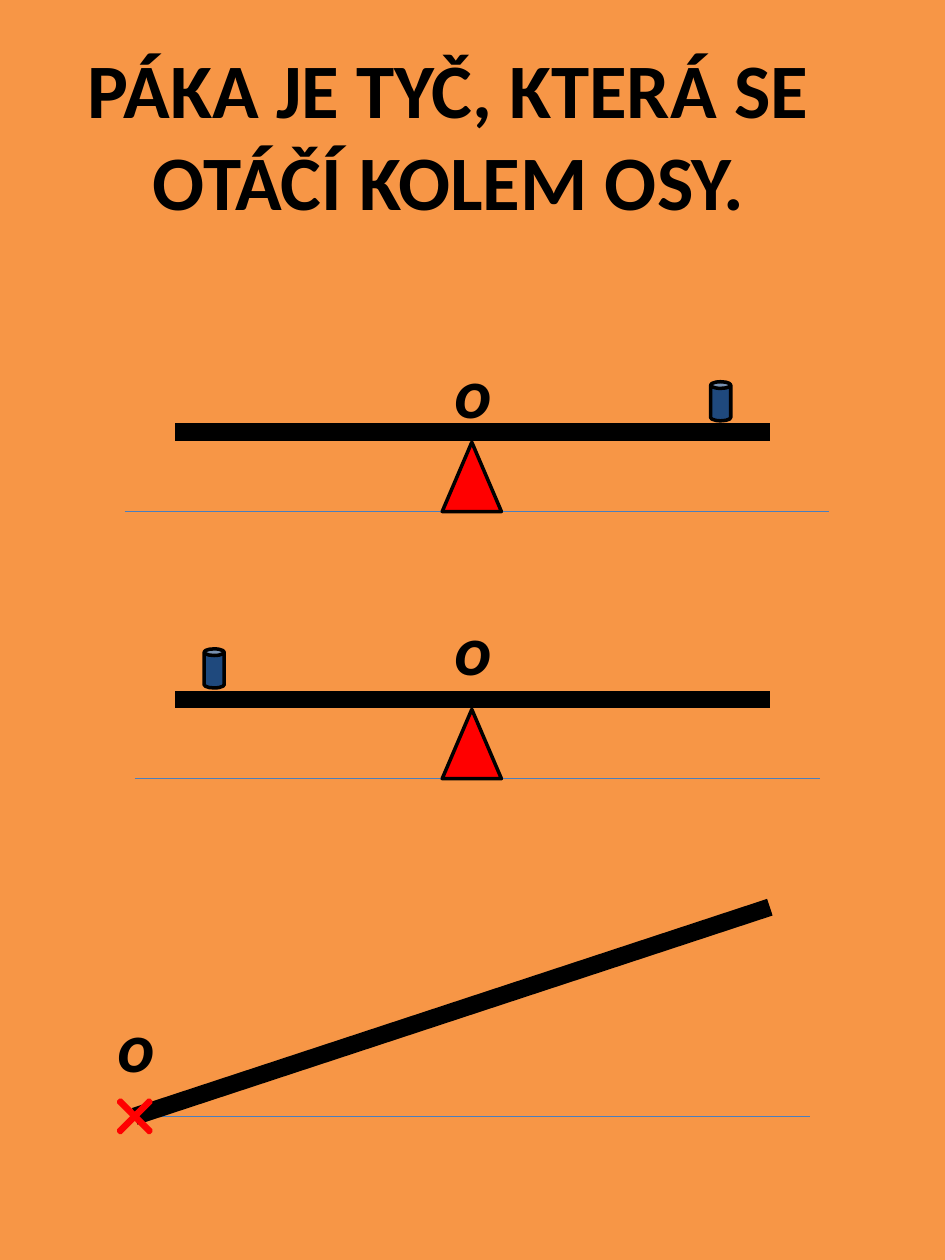
from dataclasses import dataclass

from lxml import etree
from pptx import Presentation
from pptx.dml.color import RGBColor
from pptx.enum import shapes, text
from pptx.oxml.ns import qn
from pptx.util import Inches, Pt


@dataclass(frozen=True)
class Theme:
    background: str = "F79646"
    ink: str = "000000"
    pivot: str = "FF0000"
    weight: str = "1F497D"
    ground: str = "4B7EBC"
    font: str = "Calibri"
    title_size: float = 44
    label_size: float = 40
    bar_width: float = 10
    outline: float = 2
    ground_width: float = 0.75


T = Theme()


def rgb(value):
    return RGBColor.from_string(value)


def add_run(p, words, size, italic=False):
    r = p.add_run()
    r.text = words
    r.font.name = T.font
    r.font.size = Pt(size)
    r.font.bold = True
    r.font.italic = italic
    r.font.color.rgb = rgb(T.ink)


def add_line(slide, x1, y1, x2, y2, color, width):
    line = slide.shapes.add_connector(
        shapes.MSO_CONNECTOR.STRAIGHT,
        Inches(x1), Inches(y1), Inches(x2), Inches(y2))
    line.line.color.rgb = rgb(color)
    line.line.width = Pt(width)
    etree.SubElement(line._element.spPr, qn("a:effectLst"))


def add_solid(slide, kind, left, top, width, height, fill, outline, adj=None):
    sp = slide.shapes.add_shape(
        kind, Inches(left), Inches(top), Inches(width), Inches(height))
    sp.shadow.inherit = False
    sp.fill.solid()
    sp.fill.fore_color.rgb = rgb(fill)
    sp.line.color.rgb = rgb(outline)
    sp.line.width = Pt(T.outline)
    if adj is not None:
        sp.adjustments[0] = adj


def add_axis_label(slide, left, top):
    sp = slide.shapes.add_textbox(
        Inches(left), Inches(top), Inches(0.5), Inches(0.77))
    tf = sp.text_frame
    tf.word_wrap = False
    tf.auto_size = text.MSO_AUTO_SIZE.SHAPE_TO_FIT_TEXT
    add_run(tf.paragraphs[0], "o", T.label_size, italic=True)


def add_title(slide, left, top, width, height):
    sp = slide.shapes.title
    sp.left, sp.top = Inches(left), Inches(top)
    sp.width, sp.height = Inches(width), Inches(height)
    tf = sp.text_frame
    tf.word_wrap = True
    tf.auto_size = text.MSO_AUTO_SIZE.SHAPE_TO_FIT_TEXT
    tf.vertical_anchor = text.MSO_ANCHOR.TOP
    p = tf.paragraphs[0]
    p.alignment = text.PP_ALIGN.CENTER
    add_run(p, "PÁKA JE TYČ, KTERÁ SE OTÁČÍ KOLEM OSY.", T.title_size)


def add_balanced_lever(slide, left, top, width, height, weight_at, label_rise,
                       ground_from, ground_to):
    """Bar along the top of the box, pivot below it down to the ground."""
    bottom = top + height
    pivot_left = left + width / 2 - 0.24
    # Bar and the ground under it
    add_line(slide, left, top, left + width, top, T.ink, T.bar_width)
    add_line(slide, ground_from, bottom, ground_to, bottom,
             T.ground, T.ground_width)
    # Pivot and its axis label
    add_solid(slide, shapes.MSO_SHAPE.ISOSCELES_TRIANGLE,
              pivot_left, bottom - 0.55, 0.47, 0.55, T.pivot, T.ink)
    add_axis_label(slide, pivot_left, top - label_rise)
    # Weight resting on the bar
    add_solid(slide, shapes.MSO_SHAPE.CAN, left + weight_at, top - 0.4,
              0.16, 0.31, T.weight, T.ink, 0.328)


def add_one_sided_lever(slide, left, top, width, height, ground_to):
    """Bar rising from the axis at the lower left corner of the box."""
    bottom = top + height
    # Ground and raised bar
    add_line(slide, left, bottom, ground_to, bottom, T.ground, T.ground_width)
    add_line(slide, left, bottom, left + width, top, T.ink, T.bar_width)
    # Axis cross and its label
    mark = 0.47
    add_solid(slide, shapes.MSO_SHAPE.MATH_MULTIPLY, left - mark / 2,
              bottom - mark / 2, mark, mark, T.pivot, T.pivot, 0.052)
    add_axis_label(slide, left - mark / 2, bottom - 0.95)


def main():
    prs = Presentation()
    prs.slide_width, prs.slide_height = Inches(7.5), Inches(10)
    slide = prs.slides.add_slide(prs.slide_layouts.get_by_name("Title Only"))
    fill = slide.background.fill
    fill.solid()
    fill.fore_color.rgb = rgb(T.background)

    add_title(slide, 0.29, 0.28, 6.54, 1.58)
    add_balanced_lever(slide, 1.39, 3.43, 4.72, 0.63, weight_at=4.25,
                       label_rise=0.71, ground_from=0.99, ground_to=6.58)
    add_balanced_lever(slide, 1.39, 5.55, 4.72, 0.63, weight_at=0.23,
                       label_rise=0.79, ground_from=1.07, ground_to=6.51)
    add_one_sided_lever(slide, 1.07, 7.2, 5.04, 1.66, ground_to=6.43)
    prs.save("out.pptx")


if __name__ == "__main__":
    main()
